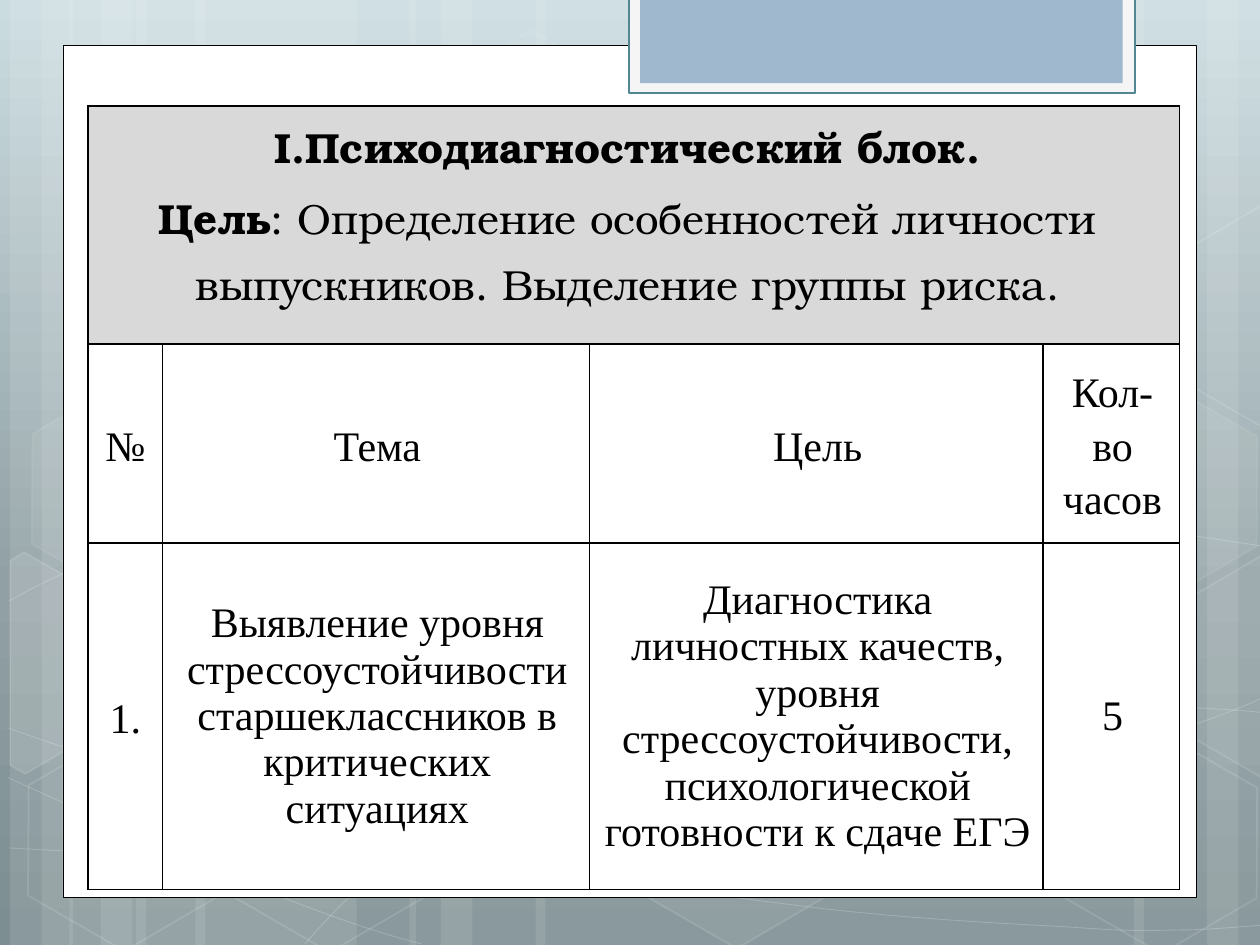
import copy
import itertools
import math
import pptx
import pptx.dml.color
import pptx.enum.shapes
import pptx.enum.text
import pptx.oxml
import pptx.util
from pptx.oxml.ns import qn

THEME = {
    "white": "FFFFFF", "black": "000000", "head": "D9D9D9",
    "tab": "F5F5F5", "edge": "528693", "blue": "9FB8CD",
    "back": [(0, "CBDCE0"), (62, "90A0A4"), (100, "7D8E92")],
    "title": "TeX Gyre Bonum", "body": "Times New Roman", "size": 24,
}
SCALE = 9144  # EMU in one px, 100 px to the inch
WIDE, HIGH = 1000, 750
TILT = 30  # degrees, for every hexagon

# Pale upright bars: left, width
BARS = [(108, 175), (8, 50), (33, 83), (155, 175), (55, 50), (80, 83),
        (733, 175), (958, 50), (900, 83), (425, 308), (325, 50), (350, 83)]

# Wavy lines: a start point, then three points for each Bezier piece
WAVES = [
    [(7, 673), (61, 676), (115, 679), (190, 678), (265, 677), (358, 675),
     (458, 665), (558, 655), (700, 636), (792, 617), (883, 598), (977, 568),
     (1007, 551)],
    [(7, 477), (36, 461), (65, 446), (121, 431), (178, 416), (259, 394),
     (347, 387), (436, 380), (544, 379), (654, 387), (764, 395), (947, 426),
     (1007, 434)],
    [(6, 617), (127, 672), (247, 727), (334, 749)],
    [(7, 578), (38, 589), (70, 600), (128, 616), (186, 631), (273, 656),
     (357, 673), (440, 690), (545, 708), (628, 718), (711, 729), (800, 733),
     (853, 736), (905, 740), (919, 738), (945, 738), (971, 737), (989, 735),
     (1007, 734)],
    [(242, 749), (260, 729), (278, 709), (302, 691), (326, 673), (360, 653),
     (388, 639), (416, 625), (433, 619), (470, 609), (506, 599), (573, 585),
     (608, 578), (644, 571), (649, 571), (680, 569), (711, 566), (760, 563),
     (794, 562), (829, 561), (886, 562), (886, 562), (886, 562), (953, 562),
     (953, 562), (971, 563), (988, 564), (997, 565), (1006, 566), (1003, 565),
     (1006, 566)],
]

# Hexagons: left, top, fill opacity, line opacity
HEXES = [(334, 36, 4, 8), (497, 589, 6, 12), (11, 591, 0, 12),
         (14, 312, 7, 8), (174, 592, 0, 12), (753, 453, 10, 12),
         (834, 593, 0, 12), (834, 314, 7, 8)]

# Hexagons cut by the slide edge: fill opacity, middle, corners as they show
CUTS = [
    (10, (36, 535), [(8, 445), (19, 438), (96, 482), (95, 570), (20, 614),
                     (8, 607)]),
    (4, (985, 520), [(926, 485), (1001, 441), (1009, 446), (1009, 613),
                     (1002, 617), (926, 573)]),
    (0, (985, 241), [(926, 207), (1001, 163), (1010, 168), (1009, 335),
                     (1002, 339), (926, 295)]),
]

# Panels: box, fill, line, line width
PANELS = [((50, 36, 900, 676), "white", "black", 0.5),
          ((499, -2, 402, 76), "tab", "edge", 1.25),
          ((508, -2, 383, 68), "blue", None, 0)]

# Table: a cell is a list of paragraphs
SPOT = (70, 84)
COLS = [59, 339, 360, 108]
ROWS = [189, 158, 275]
TITLE = [
    [("Психодиагностический блок.", True)],
    [("Цель", True), (": Определение особенностей личности выпускников. "
                      "Выделение группы риска.", False)],
]
CELLS = [
    [["№"], ["Тема"], ["Цель"], ["Кол-во часов"]],
    [["1."],
     ["Выявление уровня стрессоустойчивости старшеклассников в "
      "критических ситуациях"],
     ["Диагностика личностных качеств,", "уровня стрессоустойчивости,",
      "психологической готовности к сдаче ЕГЭ"],
     ["5"]],
]


def px(n):
    return pptx.util.Emu(round(n * SCALE))


def rgb(code):
    return pptx.dml.color.RGBColor.from_string(code)


def paint(fill, code, alpha=100):
    if not alpha:
        fill.background()
        return
    fill.solid()
    fill.fore_color.rgb = rgb(code)
    if alpha < 100:
        tint = fill._xPr.find(".//" + qn("a:srgbClr"))
        tint.append(tint.makeelement(qn("a:alpha"),
                                     {"val": str(alpha * 1000)}))


def style(shape, code, alpha=100, line=None, width=0, clear=100):
    shape.shadow.inherit = False
    paint(shape.fill, code, alpha)
    if line:
        shape.line.width = pptx.util.Pt(width)
        paint(shape.line.fill, line, clear)
    else:
        shape.line.fill.background()


def add(slide, kind, box):
    kind = getattr(pptx.enum.shapes.MSO_SHAPE, kind)
    return slide.shapes.add_shape(kind, *map(px, box))


def trace(slide, dots, close):
    dots = [(px(x), px(y)) for x, y in dots]
    pen = slide.shapes.build_freeform(*dots[0], scale=1.0)
    pen.add_line_segments(dots[1:], close=close)
    return pen.convert_to_shape()


def curve(slide, dots):
    """Join each three line ends into one Bezier piece."""
    shape = trace(slide, dots, False)
    lines = list(shape.element.iter(qn("a:lnTo")))
    for i in range(0, len(lines), 3):
        piece = lines[i].makeelement(qn("a:cubicBezTo"), {})
        lines[i].addprevious(piece)
        for line in lines[i:i + 3]:
            piece.append(line[0])
            line.getparent().remove(line)
    return shape


def level(dots, mid):
    """Turn the corners back by the tilt, about the middle."""
    cos, sin = math.cos(math.radians(TILT)), math.sin(math.radians(TILT))
    gaps = [(x - mid[0], y - mid[1]) for x, y in dots]
    return [(mid[0] + x * cos + y * sin, mid[1] - x * sin + y * cos)
            for x, y in gaps]


def backdrop(slide):
    slide.background.fill.gradient()
    grad = slide.element.find(".//" + qn("a:gradFill"))
    stops = grad.find(qn("a:gsLst"))
    base = copy.deepcopy(stops[0])
    base.remove(base[0])
    for node in list(stops):
        stops.remove(node)
    for pos, code in THEME["back"]:
        stop = copy.deepcopy(base)
        stop.set("pos", str(pos * 1000))
        stop.append(stop.makeelement(qn("a:srgbClr"), {"val": code}))
        stops.append(stop)
    grad.find(qn("a:lin")).set("ang", "5400000")


def border(cell):
    props = cell._tc.get_or_add_tcPr()
    for side in "LRTB":
        props.append(pptx.oxml.parse_xml(
            f'<a:ln{side} xmlns:a="http://schemas.openxmlformats.org/'
            'drawingml/2006/main" w="12700"><a:solidFill><a:srgbClr '
            f'val="{THEME["black"]}"/></a:solidFill></a:ln{side}>'))


def write(cell, paras, font, space, left=0, right=0):
    cell.margin_left = cell.margin_right = px(7)
    cell.margin_top = cell.margin_bottom = 0
    frame = cell.text_frame
    for i, runs in enumerate(paras):
        para = frame.add_paragraph() if i else frame.paragraphs[0]
        para.alignment = pptx.enum.text.PP_ALIGN.CENTER
        para.line_spacing = space
        props = para._p.get_or_add_pPr()
        for key, size in (("marL", left), ("marR", right), ("indent", 0)):
            props.set(key, str(px(size)))
        for text, bold in runs:
            run = para.add_run()
            run.text = text
            run.font.name = font
            run.font.size = pptx.util.Pt(THEME["size"])
            run.font.bold = bold
            run.font.color.rgb = rgb(THEME["black"])


def grid(slide):
    size = (sum(COLS), sum(ROWS))
    table = slide.shapes.add_table(
        len(ROWS), len(COLS), *map(px, SPOT + size)).table
    table.first_row = table.horz_banding = False
    for part, span in zip(table.columns, COLS):
        part.width = px(span)
    for part, span in zip(table.rows, ROWS):
        part.height = px(span)
    for r, c in itertools.product(range(len(ROWS)), range(len(COLS))):
        cell = table.cell(r, c)
        border(cell)
        paint(cell.fill, THEME["head"], 0 if r else 100)
        if r:
            paras = [[(text, False)] for text in CELLS[r - 1][c]]
            space = 1.15 if r == 1 or c == 0 else 1.0
            write(cell, paras, THEME["body"], space, 2 if c else 0)
            cell.vertical_anchor = pptx.enum.text.MSO_ANCHOR.MIDDLE
    # Title row, its first paragraph numbered with a Roman numeral
    head = table.cell(0, 0)
    head.merge(table.cell(0, len(COLS) - 1))
    write(head, TITLE, THEME["title"], 1.15, right=10)
    props = head.text_frame.paragraphs[0]._p.get_or_add_pPr()
    props.append(props.makeelement(qn("a:buAutoNum"),
                                   {"type": "romanUcPeriod"}))


def main():
    deck = pptx.Presentation()
    deck.slide_width, deck.slide_height = px(WIDE), px(HIGH)
    slide = deck.slides.add_slide(deck.slide_layouts[6])
    white = THEME["white"]

    # Backdrop pattern
    backdrop(slide)
    for left, width in BARS:
        style(add(slide, "RECTANGLE", (left, 0, width, HIGH)), white, 10)
    for dots in WAVES:
        style(curve(slide, dots), white, 0, white, 0.5, 20)
    for left, top, alpha, clear in HEXES:
        shape = add(slide, "HEXAGON", (left, top, 175, 152))
        shape.adjustments[0] = 0.285
        shape.rotation = TILT
        style(shape, white, alpha, white, 1, clear)
    for alpha, mid, dots in CUTS:
        shape = trace(slide, level(dots, mid), True)
        shape.rotation = TILT
        style(shape, white, alpha, white, 1, 12)

    # Page and tab
    for box, fill, line, width in PANELS:
        style(add(slide, "RECTANGLE", box), THEME[fill], 100,
              THEME.get(line), width)

    grid(slide)
    deck.save("out.pptx")


if __name__ == "__main__":
    main()
